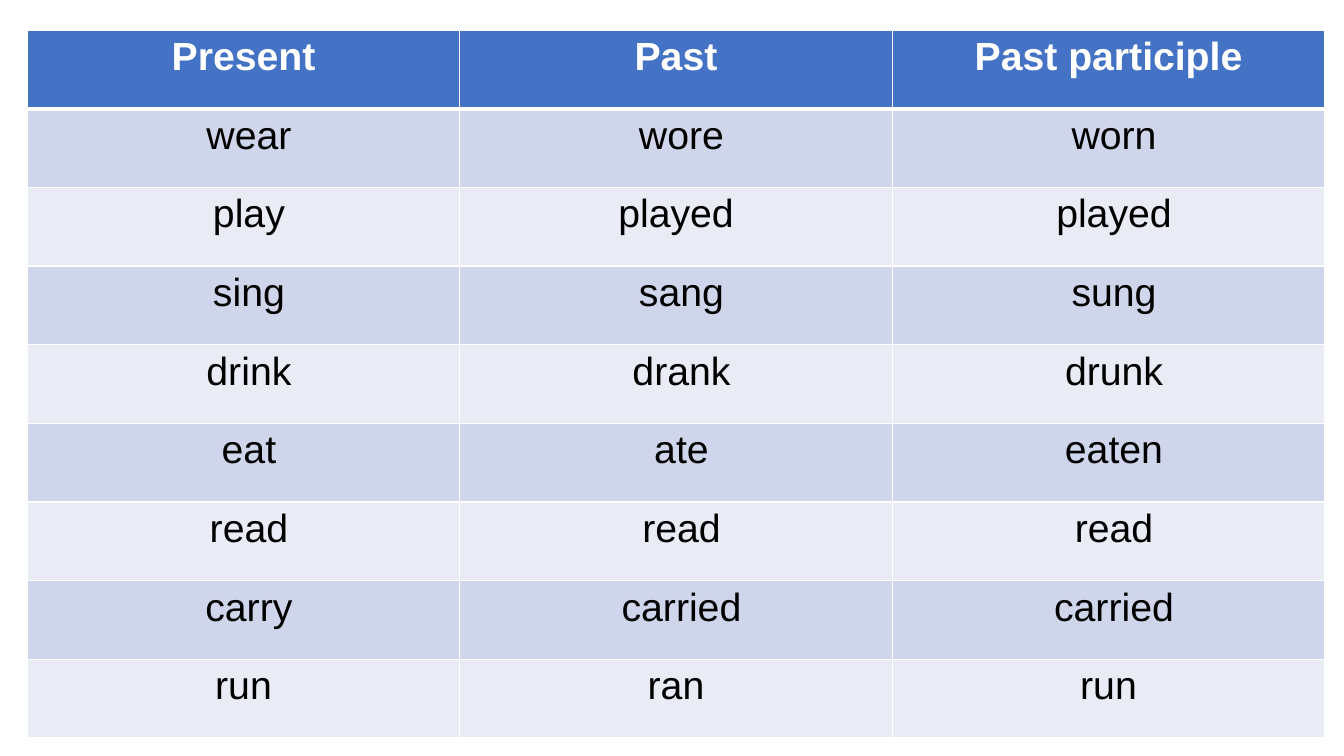
from lxml.etree import SubElement
from pptx import Presentation
from pptx.dml.color import RGBColor
from pptx.enum.text import PP_ALIGN
from pptx.oxml.ns import qn
from pptx.util import Inches, Pt

VERBS = [
    ("Present", "Past", "Past participle"),
    (" wear", " wore", " worn"),
    (" play", "played", " played"),
    (" sing", " sang", " sung"),
    (" drink", " drank", " drunk"),
    (" eat", " ate", " eaten"),
    (" read", " read", " read"),
    (" carry", " carried", " carried"),
    (" run ", " ran ", " run "),
]
HEAD, BANDS = "4472C4", ("E9EBF5", "CFD5EA")
WHITE, BLACK = "FFFFFF", "000000"
LEFT, TOP, WIDE, HIGH = 0.27, 0.3, 4.29, 0.78


def color(code):
    return RGBColor.from_string(code)


def write(cell, text, size=28, font="Arial", ink=BLACK, bold=False):
    para = cell.text_frame.paragraphs[0]
    para.alignment = PP_ALIGN.CENTER
    run = para.add_run()
    run.text = text
    run.font.size = Pt(size)
    run.font.name = font
    run.font.bold = bold
    run.font.color.rgb = color(ink)


def edge(cell, **widths):
    props = cell._tc.get_or_add_tcPr()
    for side, width in widths.items():
        line = SubElement(props, qn(f"a:ln{side}"), w=str(Pt(width)))
        fill = SubElement(line, qn("a:solidFill"))
        SubElement(fill, qn("a:srgbClr"), val=WHITE)


def main():
    deck = Presentation()
    deck.slide_width, deck.slide_height = Inches(13.33), Inches(7.5)
    slide = deck.slides.add_slide(deck.slide_layouts[6])
    rows, cols = len(VERBS), len(VERBS[0])
    table = slide.shapes.add_table(
        rows, cols, Inches(LEFT), Inches(TOP),
        Inches(WIDE * cols), Inches(HIGH * rows)).table
    for col in table.columns:
        col.width = Inches(WIDE)
    for i, verb in enumerate(VERBS):
        table.rows[i].height = Inches(HIGH)
        head = i == 0
        for j, text in enumerate(verb):
            cell = table.cell(i, j)
            write(cell, text, ink=WHITE if head else BLACK, bold=head)
            edge(cell, L=1, R=1, T=3 if i == 1 else 1, B=3 if head else 1)
            cell.fill.solid()
            cell.fill.fore_color.rgb = color(HEAD if head else BANDS[i % 2])
    deck.save("out.pptx")


if __name__ == "__main__":
    main()
